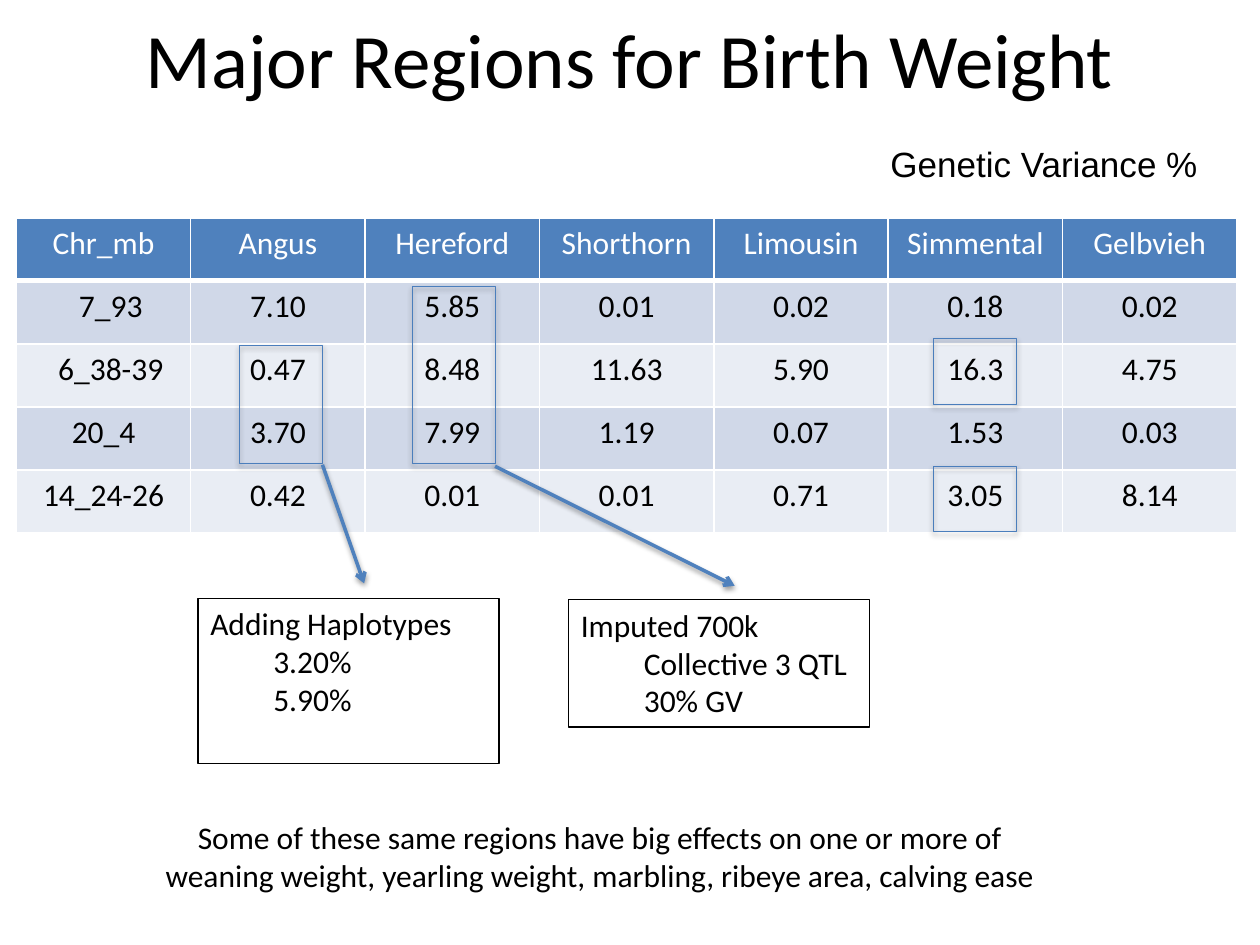
import dataclasses

import lxml.etree
import pptx
import pptx.dml.color
import pptx.enum.shapes
import pptx.enum.text
import pptx.oxml.ns
import pptx.util

Cm, Pt = pptx.util.Cm, pptx.util.Pt
ALIGN = pptx.enum.text.PP_ALIGN
ANCHOR = pptx.enum.text.MSO_ANCHOR
RECTANGLE = pptx.enum.shapes.MSO_SHAPE.RECTANGLE
STRAIGHT = pptx.enum.shapes.MSO_CONNECTOR.STRAIGHT


@dataclasses.dataclass(frozen=True)
class Theme:
    font: str = "Calibri"
    label_font: str = "Arial"
    title_size: int = 44
    label_size: int = 20
    body_size: int = 18
    ink: str = "000000"
    paper: str = "FFFFFF"
    accent: str = "4F81BD"
    frame: str = "4B7EBC"
    bands: tuple = ("D0D8E8", "E9EDF4")


def rgb(value):
    return pptx.dml.color.RGBColor.from_string(value)


def child(parent, tag, **attributes):
    return lxml.etree.SubElement(parent, pptx.oxml.ns.qn(tag), attributes)


class RegionSlide:
    """Builds a slide from themed elements placed in centimetres."""

    def __init__(self, presentation, theme):
        self.theme = theme
        self.slide = presentation.slides.add_slide(presentation.slide_layouts[5])
        self.shapes = self.slide.shapes

    def add_words(self, paragraph, wording, size=None, color=None, font=None,
                  align=ALIGN.LEFT, indent=0):
        if indent:
            properties = paragraph._p.get_or_add_pPr()
            properties.set("marL", str(Cm(indent)))
            properties.set("indent", "0")
        paragraph.alignment = align
        run = paragraph.add_run()
        run.text = wording
        run.font.name = font or self.theme.font
        run.font.size = Pt(size or self.theme.body_size)
        run.font.color.rgb = rgb(color or self.theme.ink)

    def shade(self, shape, distance, opacity):
        effects = child(shape._element.spPr, "a:effectLst")
        shadow = child(effects, "a:outerShdw", blurRad=str(Pt(3.1)),
                       dist=str(Pt(distance)), dir="5400000", rotWithShape="0")
        black = child(shadow, "a:srgbClr", val=self.theme.ink)
        child(black, "a:alpha", val=str(opacity * 1000))

    def title(self, wording, left, top, width, height):
        heading = self.shapes.title
        heading.left, heading.top = Cm(left), Cm(top)
        heading.width, heading.height = Cm(width), Cm(height)
        heading.text_frame.vertical_anchor = ANCHOR.MIDDLE
        self.add_words(heading.text_frame.paragraphs[0], wording,
                       self.theme.title_size, align=ALIGN.CENTER)

    def text(self, lines, left, top, width, height, **style):
        frame = self.shapes.add_textbox(
            Cm(left), Cm(top), Cm(width), Cm(height)).text_frame
        frame.word_wrap = False
        self.fill_lines(frame, [(line, 0) for line in lines], **style)

    def fill_lines(self, frame, lines, **style):
        for index, (line, indent) in enumerate(lines):
            paragraph = frame.add_paragraph() if index else frame.paragraphs[0]
            self.add_words(paragraph, line, indent=indent, **style)

    def rectangle(self, left, top, width, height, color):
        outline = self.shapes.add_shape(
            RECTANGLE, Cm(left), Cm(top), Cm(width), Cm(height))
        outline.fill.background()
        outline.line.color.rgb = rgb(color)
        outline.line.width = Pt(0.75)
        return outline

    def highlight(self, left, top, height):
        outline = self.rectangle(left, top, 1.68, height, self.theme.frame)
        self.shade(outline, 1.8, 35)

    def note(self, heading, details, left, top, height):
        box = self.rectangle(left, top, 6.07, height, self.theme.ink)
        box.shadow.inherit = False
        box.text_frame.word_wrap = True
        box.text_frame.vertical_anchor = ANCHOR.TOP
        self.fill_lines(box.text_frame,
                        [(heading, 0)] + [(detail, 1.27) for detail in details])

    def arrow(self, start_x, start_y, end_x, end_y):
        pointer = self.shapes.add_connector(
            STRAIGHT, Cm(start_x), Cm(start_y), Cm(end_x), Cm(end_y))
        pointer.line.color.rgb = rgb(self.theme.accent)
        pointer.line.width = Pt(2)
        child(pointer.line._get_or_add_ln(), "a:tailEnd", type="arrow")
        self.shade(pointer, 1.6, 38)

    def border(self, cell, bottom_width):
        properties = cell._tc.get_or_add_tcPr()
        widths = {"L": 1, "R": 1, "T": 1, "B": bottom_width}
        for side, width in widths.items():
            edge = child(properties, f"a:ln{side}", w=str(Pt(width)))
            child(child(edge, "a:solidFill"), "a:srgbClr", val=self.theme.paper)

    def table(self, rows, indents, left, top, width, height):
        grid = self.shapes.add_table(len(rows), len(rows[0]), Cm(left), Cm(top),
                                     Cm(width), Cm(height)).table
        for column in grid.columns:
            column.width = Cm(width / len(rows[0]))
        for r, row in enumerate(rows):
            header = r == 0
            grid.rows[r].height = Cm(height / len(rows))
            for c, value in enumerate(row):
                cell = grid.cell(r, c)
                self.border(cell, 3 if header else 1)
                cell.fill.solid()
                cell.fill.fore_color.rgb = rgb(
                    self.theme.accent if header else self.theme.bands[(r - 1) % 2])
                self.add_words(cell.text_frame.paragraphs[0], value,
                               color=self.theme.paper if header else self.theme.ink,
                               align=ALIGN.CENTER, indent=indents.get(value, 0))


VARIANCES = [
    ("Chr_mb", "Angus", "Hereford", "Shorthorn", "Limousin", "Simmental", "Gelbvieh"),
    ("7_93", "7.10", "5.85", "0.01", "0.02", "0.18", "0.02"),
    ("6_38-39", "0.47", "8.48", "11.63", "5.90", "16.3", "4.75"),
    ("20_4", "3.70", "7.99", "1.19", "0.07", "1.53", "0.03"),
    ("14_24-26", "0.42", "0.01", "0.01", "0.71", "3.05", "8.14"),
]
REGION_INDENTS = {"7_93": 0.29, "6_38-39": 0.29}
HIGHLIGHTS = [(4.83, 6.96, 2.39), (8.31, 5.77, 3.58),
              (18.82, 6.83, 1.32), (18.82, 9.4, 1.32)]
ARROWS = [(6.5, 9.37, 7.34, 11.76), (9.98, 9.4, 14.81, 11.81)]


def main():
    presentation = pptx.Presentation()
    presentation.slide_width, presentation.slide_height = Cm(25.4), Cm(19.05)
    theme = Theme()
    regions = RegionSlide(presentation, theme)
    regions.title("Major Regions for Birth Weight", 1.27, -0.43, 22.86, 3.18)
    regions.table(VARIANCES, REGION_INDENTS, 0.33, 4.39, 24.61, 6.35)
    regions.text(["Genetic Variance %"], 17.7, 2.74, 6.76, 1.12,
                 size=theme.label_size, font=theme.label_font)
    regions.text(["Some of these same regions have big effects on one or more of",
                  "weaning weight, yearling weight, marbling, ribeye area, calving ease"],
                 2.9, 16.36, 18.39, 1.8, align=ALIGN.CENTER)
    for placement in HIGHLIGHTS:
        regions.highlight(*placement)
    regions.note("Adding Haplotypes", ["3.20%", "5.90%"], 3.99, 12.06, 3.33)
    regions.note("Imputed 700k", ["Collective 3 QTL", "30% GV"], 11.46, 12.09, 2.57)
    for ends in ARROWS:
        regions.arrow(*ends)
    presentation.save("out.pptx")


if __name__ == "__main__":
    main()
